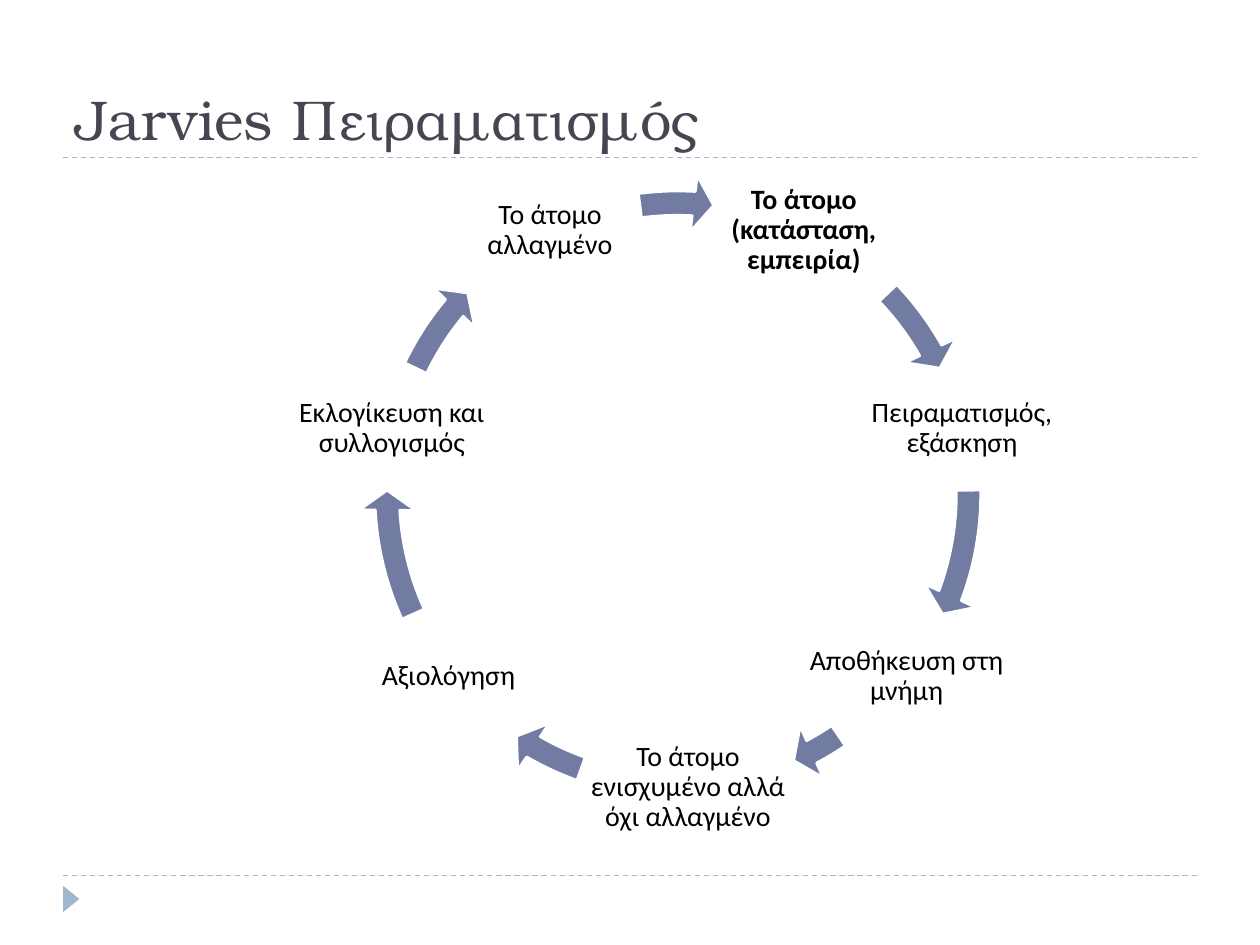
from dataclasses import dataclass

from lxml.etree import SubElement
from pptx import Presentation
from pptx.dml.color import RGBColor
from pptx.enum.dml import MSO_LINE
from pptx.enum.shapes import MSO_CONNECTOR, MSO_SHAPE
from pptx.enum.text import MSO_ANCHOR, PP_ALIGN
from pptx.oxml.ns import qn
from pptx.shapes.autoshape import Shape
from pptx.slide import Slide
from pptx.util import Inches, Pt


@dataclass
class Step:
    text: str
    left: float
    top: float
    width: float
    end: float
    start: float
    ring: tuple[float, float] = (2.85, 1.39)
    bold: bool = False


SIZE = 5.06
HEIGHT = 0.98
PALE = "9FB8CD"
STEPS = [
    Step("Το άτομο (κατάσταση, εμπειρία)", 5.66, 1.34, 1.44, 330.45, 316.3, bold=True),
    Step("Πειραματισμός, εξάσκηση", 6.82, 2.91, 1.63, 20.5, 359.29),
    Step("Αποθήκευση στη μνήμη", 6.24, 4.88, 1.91, 62.04, 55.87, (2.83, 1.4)),
    Step("Το άτομο ενισχυμένο αλλά όχι αλλαγμένο", 4.61, 5.76, 1.7, 120.05, 109.71, (2.86, 1.4)),
    Step("Αξιολόγηση", 2.56, 4.88, 2, 176.8, 155.58),
    Step("Εκλογίκευση και συλλογισμός", 2.04, 2.91, 2.14, 219.78, 205.64),
    Step("Το άτομο αλλαγμένο", 3.66, 1.34, 1.41, 273.16, 262.53),
]


def color(code: str) -> RGBColor:
    return RGBColor.from_string(code)


def add_text(slide: Slide, text: str, box: tuple[float, ...], *, size: float,
             font: str, ink: str, bold: bool = False, align=PP_ALIGN.LEFT,
             anchor=MSO_ANCHOR.MIDDLE, inset: float | None = None,
             space: float = 1.0) -> None:
    frame = slide.shapes.add_textbox(*map(Inches, box)).text_frame
    frame.word_wrap = True
    frame.vertical_anchor = anchor
    if inset is not None:
        frame.margin_left = frame.margin_right = Inches(inset)
        frame.margin_top = frame.margin_bottom = Inches(inset)
    para = frame.paragraphs[0]
    para.alignment = align
    para.line_spacing = space
    run = para.add_run()
    run.text = text
    run.font.size = Pt(size)
    run.font.name = font
    run.font.bold = bold
    run.font.color.rgb = color(ink)


def add_rule(slide: Slide, y: float) -> None:
    rule = slide.shapes.add_connector(
        MSO_CONNECTOR.STRAIGHT, Inches(0.5), Inches(y), Inches(9.5), Inches(y))
    rule.line.color.rgb = color(PALE)
    rule.line.width = Pt(0.75)
    rule.line.dash_style = MSO_LINE.DASH
    SubElement(rule._element.spPr, qn("a:effectLst"))


def add_shape(slide: Slide, kind: MSO_SHAPE, box: tuple[float, ...], fill: str) -> Shape:
    shape = slide.shapes.add_shape(kind, *map(Inches, box))
    shape.shadow.inherit = False
    shape.fill.solid()
    shape.fill.fore_color.rgb = color(fill)
    shape.line.fill.background()
    return shape


def add_arrow(slide: Slide, step: Step) -> None:
    arrow = add_shape(slide, MSO_SHAPE.CIRCULAR_ARROW, (*step.ring, SIZE, SIZE), "727CA3")
    arrow.line.color.rgb = color("FFFFFF")
    arrow.line.width = Pt(1.5)
    turns = (0.038, 2.348, step.end * 0.6, step.start * 0.6, 0.044)
    for index, value in enumerate(turns):
        arrow.adjustments[index] = value


def add_step(slide: Slide, step: Step) -> None:
    add_text(slide, step.text, (step.left, step.top, step.width, HEIGHT), size=16,
             font="Calibri", ink="000000", bold=step.bold, align=PP_ALIGN.CENTER,
             inset=0.02, space=0.9)
    add_arrow(slide, step)


def main() -> None:
    deck = Presentation()
    deck.slide_width, deck.slide_height = Inches(10), Inches(7.5)
    slide = deck.slides.add_slide(deck.slide_layouts[6])
    for y in (6.95, 1.25):
        add_rule(slide, y)
    mark = add_shape(slide, MSO_SHAPE.ISOSCELES_TRIANGLE, (0.46, 7.07, 0.21, 0.13), PALE)
    mark.rotation = 90
    add_text(slide, "Jarvies Πειραματισμός", (0.5, 0.17, 9, 1.08), size=32,
             font="TeX Gyre Bonum", ink="464653", anchor=MSO_ANCHOR.BOTTOM)
    for step in STEPS:
        add_step(slide, step)
    deck.save("out.pptx")


if __name__ == "__main__":
    main()
